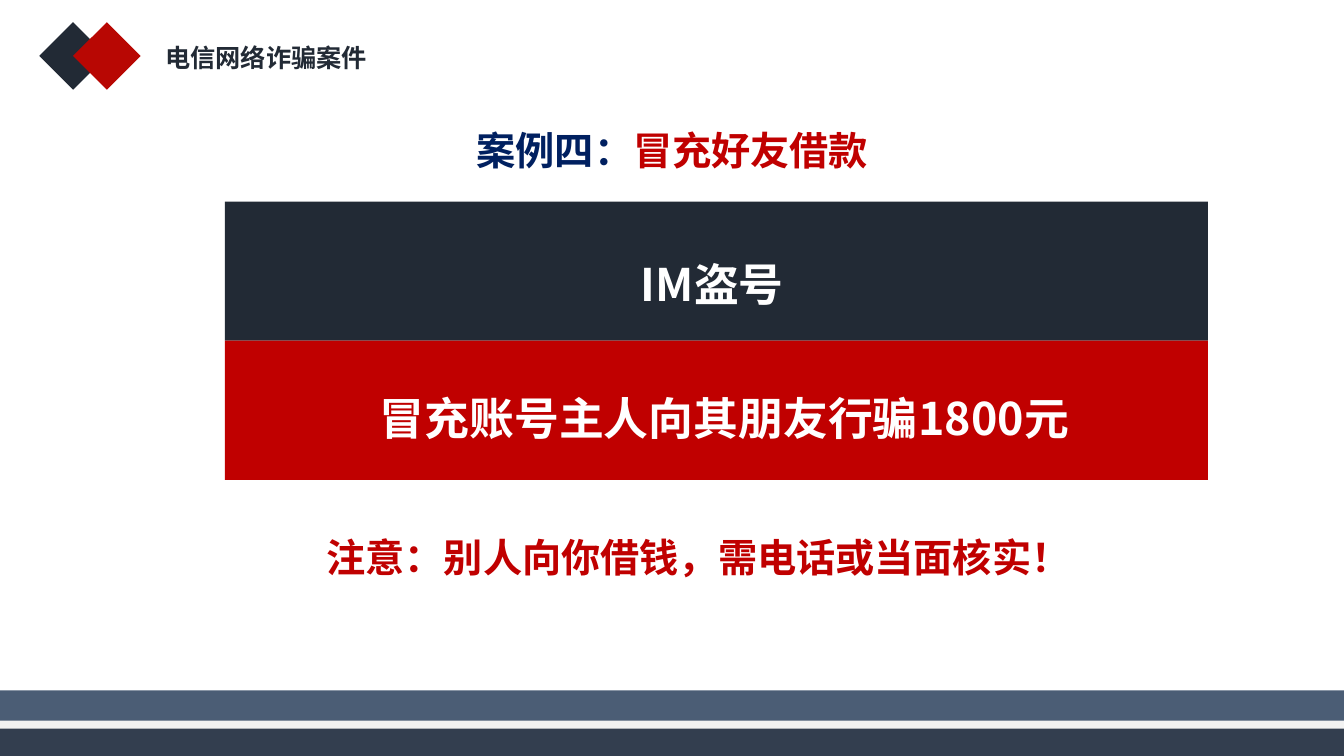
from dataclasses import dataclass

from lxml.etree import SubElement
from pptx import Presentation
from pptx.dml.color import RGBColor
from pptx.enum.shapes import MSO_SHAPE as Preset
from pptx.enum.text import MSO_ANCHOR as Anchor, PP_ALIGN as Align
from pptx.oxml.ns import qn
from pptx.util import Inches, Pt


@dataclass(frozen=True)
class Theme:
    font: str = "Noto Sans CJK SC"
    dark: str = "222A35"
    red: str = "C00000"
    diamond_red: str = "B80703"
    navy: str = "002060"
    white: str = "FFFFFF"
    slate: str = "4B5D75"
    pale: str = "F2F2F2"
    footer_dark: str = "333E4F"
    header_size: int = 18
    heading_size: int = 28
    band_size: int = 32


THEME = Theme()


def add_block(slide, preset, box, color):
    block = slide.shapes.add_shape(preset, *map(Inches, box))
    block.shadow.inherit = False
    block.fill.solid()
    block.fill.fore_color.rgb = RGBColor.from_string(color)
    block.line.fill.background()


def write(frame, pieces, size, align, inset=(0, 0), wrap=True):
    """Fill a frame with one bold paragraph of (text, color) pieces."""
    frame.word_wrap = wrap
    frame.vertical_anchor = Anchor.TOP
    frame.margin_left = frame.margin_right = Inches(inset[0])
    frame.margin_top = frame.margin_bottom = Inches(inset[1])
    line = frame.paragraphs[0]
    line.alignment = align
    line.line_spacing = 1.0
    line.space_before = Pt(0)
    for text, color in pieces:
        run = line.add_run()
        run.text = text
        run.font.size = Pt(size)
        run.font.bold = True
        run.font.name = THEME.font
        run.font.color.rgb = RGBColor.from_string(color)
        SubElement(run.font._element, qn("a:ea"), typeface=THEME.font)
    return line


def add_text(slide, box, *args, **options):
    label = slide.shapes.add_textbox(*map(Inches, box))
    return write(label.text_frame, *args, **options)


def add_header(slide, left, top):
    side = 0.67
    for offset, color in ((0, THEME.dark), (side / 2, THEME.diamond_red)):
        add_block(slide, Preset.DIAMOND, (left + offset, top, side, side), color)
    add_text(slide, (left + 1.14, top + 0.15, 2.22, 0.4),
             [("电信网络诈骗案件", THEME.dark)], THEME.header_size,
             Align.CENTER, inset=(0.1, 0.05), wrap=False)


def add_footer(slide, width, top, bottom):
    """Stack stripes that each reach down to the slide's bottom edge."""
    for offset, color in ((0, THEME.slate), (0.3, THEME.pale),
                          (0.38, THEME.footer_dark)):
        stripe_top = top + offset
        add_block(slide, Preset.RECTANGLE,
                  (0, stripe_top, width, bottom - stripe_top), color)


def place_title(slide, left, top, width, height):
    title = slide.shapes.title
    title.left, title.top = Inches(left), Inches(top)
    title.width, title.height = Inches(width), Inches(height)
    write(title.text_frame,
          [("案例四：", THEME.navy), ("冒充好友借款", THEME.red)],
          THEME.heading_size, Align.RIGHT, wrap=False)


def add_bands(slide, left, top, width, height):
    bands = (
        ("IM盗号", THEME.dark, 0.46, 0.55, 8.75),
        ("冒充账号主人向其朋友行骗1800元", THEME.red, 0.15, 0.5, 9.61),
    )
    for row, (text, color, indent, drop, text_width) in enumerate(bands):
        band_top = top + row * height
        add_block(slide, Preset.RECTANGLE, (left, band_top, width, height), color)
        add_text(slide, (left + indent, band_top + drop, text_width, 0.71),
                 [(text, THEME.white)], THEME.band_size, Align.CENTER)


def add_warning(slide, box):
    line = add_text(slide, box,
                    [("注意：别人向你借钱，需电话或当面核实！", THEME.red)],
                    THEME.heading_size, Align.LEFT, inset=(0.1, 0.05))
    line.line_spacing = 1.5


def main():
    width, height = 13.33, 7.5
    deck = Presentation()
    deck.slide_width, deck.slide_height = Inches(width), Inches(height)
    slide = deck.slides.add_slide(deck.slide_layouts.get_by_name("Title Only"))
    add_header(slide, 0.39, 0.22)
    add_footer(slide, width, 6.85, height)
    place_title(slide, 4.68, 1.25, 3.93, 0.47)
    add_bands(slide, 2.23, 2, 9.75, 1.38)
    add_warning(slide, (3.14, 5.01, 8.07, 0.87))
    deck.save("out.pptx")


if __name__ == "__main__":
    main()
